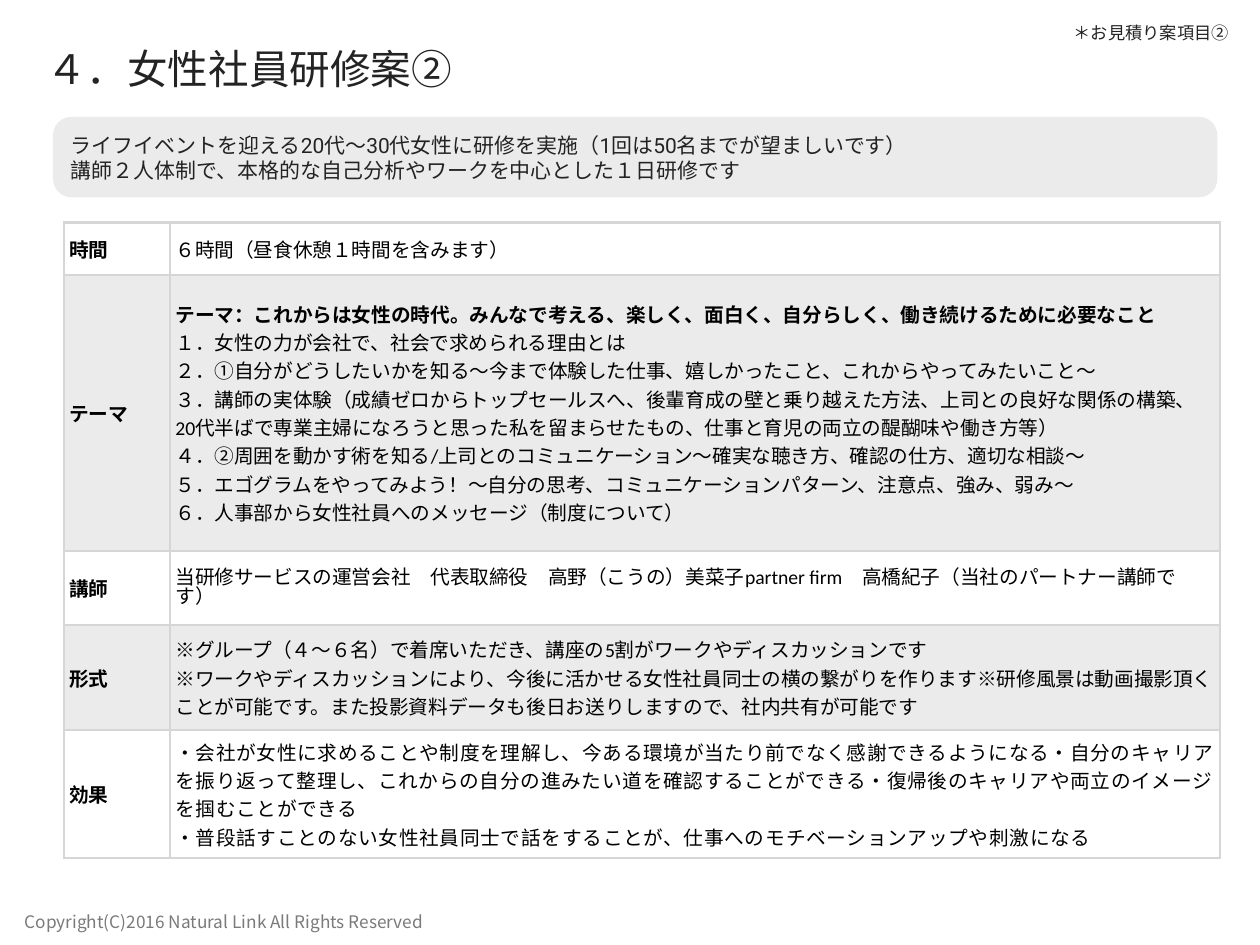
from lxml import etree
from pptx import Presentation
from pptx.dml.color import RGBColor
from pptx.enum.shapes import MSO_SHAPE as SHAPE
from pptx.enum.text import MSO_ANCHOR as ANCHOR
from pptx.oxml.ns import qn
from pptx.util import Cm, Pt

# Content
TITLE = "４．女性社員研修案②"
TAG = "＊お見積り案項目②"
COPYRIGHT = "Copyright(C)2016 Natural Link All Rights Reserved"
SUMMARY = [
    "ライフイベントを迎える20代〜30代女性に研修を実施（1回は50名までが望ましいです）",
    "講師２人体制で、本格的な自己分析やワークを中心とした１日研修です",
]
THEME = "テーマ：これからは女性の時代。みんなで考える、楽しく、面白く、自分らしく、働き続けるために必要なこと"
# Label, row height in cm, lines, format
ROWS = [
    ("時間", 1.5, ["６時間（昼食休憩１時間を含みます）"], {}),
    ("テーマ", 7.92, [
        THEME,
        "１．女性の力が会社で、社会で求められる理由とは",
        "２．①自分がどうしたいかを知る〜今まで体験した仕事、嬉しかったこと、これからやってみたいこと〜",
        "３．講師の実体験（成績ゼロからトップセールスへ、後輩育成の壁と乗り越えた方法、上司との良好な関係の構築、",
        "20代半ばで専業主婦になろうと思った私を留まらせたもの、仕事と育児の両立の醍醐味や働き方等）",
        "４．②周囲を動かす術を知る/上司とのコミュニケーション〜確実な聴き方、確認の仕方、適切な相談〜",
        "５．エゴグラムをやってみよう！〜自分の思考、コミュニケーションパターン、注意点、強み、弱み〜",
        "６．人事部から女性社員へのメッセージ（制度について）",
    ], {}),
    ("講師", 2.13, [
        "当研修サービスの運営会社　代表取締役　高野（こうの）美菜子partner firm　高橋紀子（当社のパートナー講師です）",
    ], {"spacing": 0.7}),
    ("形式", 3.0, [
        "※グループ（４〜６名）で着席いただき、講座の5割がワークやディスカッションです",
        "※ワークやディスカッションにより、今後に活かせる女性社員同士の横の繋がりを作ります"
        "※研修風景は動画撮影頂くことが可能です。また投影資料データも後日お送りしますので、社内共有が可能です",
    ], {}),
    ("効果", 3.68, [
        "・会社が女性に求めることや制度を理解し、今ある環境が当たり前でなく感謝できるようになる"
        "・自分のキャリアを振り返って整理し、これからの自分の進みたい道を確認することができる"
        "・復帰後のキャリアや両立のイメージを掴むことができる",
        "・普段話すことのない女性社員同士で話をすることが、仕事へのモチベーションアップや刺激になる",
    ], {"font": "Noto Sans CJK JP", "tracking": 0.6}),
]
COL_WIDTHS = [3.05, 30.1]
INK, GREY, PANEL, BORDER = "232323", "7A7A7A", "EBEBEB", "D6D6D6"
INSET = Cm(0.15)


def color(hex_code):
    return RGBColor.from_string(hex_code)


def write(tf, lines, size=16, font="Calibri", east="Noto Sans CJK JP", ink="000000",
          bold_lines=(), spacing=None, tracking=None):
    for i, line in enumerate(lines):
        p = tf.paragraphs[0] if i == 0 else tf.add_paragraph()
        if spacing:
            p.line_spacing = spacing
        r = p.add_run()
        r.text = line
        r.font.size, r.font.name, r.font.bold = Pt(size), font, line in bold_lines
        r.font.color.rgb = color(ink)
        rPr = r.font._element
        etree.SubElement(rPr, qn("a:ea")).set("typeface", east)
        if tracking:
            rPr.set("spc", str(round(tracking * 100)))


def text_box(s, box, lines, wrap=True, **fmt):
    tf = s.shapes.add_textbox(*map(Cm, box)).text_frame
    tf.word_wrap, tf.vertical_anchor = wrap, ANCHOR.MIDDLE
    tf.margin_left = tf.margin_right = tf.margin_top = tf.margin_bottom = INSET
    write(tf, lines, **fmt)


def style_cell(cell, fill):
    cell.vertical_anchor = ANCHOR.MIDDLE
    cell.margin_left = cell.margin_right = cell.margin_top = cell.margin_bottom = INSET
    tcPr = cell._tc.get_or_add_tcPr()
    for side in ("lnL", "lnR", "lnT", "lnB"):
        ln = etree.SubElement(tcPr, qn("a:" + side), w=str(Pt(2)))
        line_fill = etree.SubElement(ln, qn("a:solidFill"))
        etree.SubElement(line_fill, qn("a:srgbClr"), val=BORDER)
    cell.fill.solid()
    cell.fill.fore_color.rgb = color(fill)


prs = Presentation()
prs.slide_width, prs.slide_height = Cm(36.12), Cm(27.1)
s = prs.slides.add_slide(prs.slide_layouts[6])

# Title and footer
roboto = {"font": "Roboto", "east": "Roboto", "ink": INK}
text_box(s, (1.17, 1.22, 33.81, 1.47), [TITLE], size=33, **roboto)
text_box(s, (0.56, 26.04, 19.23, 0.79), [COPYRIGHT], size=14,
         font="Noto Sans CJK JP", ink=GREY)

# Summary panel
panel = s.shapes.add_shape(SHAPE.ROUNDED_RECTANGLE, Cm(1.52), Cm(3.35), Cm(33.38), Cm(2.31))
panel.adjustments[0] = 0.23
panel.shadow.inherit = False
panel.fill.solid()
panel.fill.fore_color.rgb = color(PANEL)
panel.line.fill.background()

# Programme table
heights = [row[1] for row in ROWS]
table = s.shapes.add_table(len(ROWS), 2, Cm(1.83), Cm(6.38),
                           Cm(sum(COL_WIDTHS)), Cm(sum(heights))).table
table.first_row = table.horz_banding = False
for col, width in zip(table.columns, COL_WIDTHS):
    col.width = Cm(width)
for i, (label, height, lines, fmt) in enumerate(ROWS):
    table.rows[i].height = Cm(height)
    head, body = table.cell(i, 0), table.cell(i, 1)
    for cell in (head, body):
        style_cell(cell, PANEL if i % 2 else "FFFFFF")
    write(head.text_frame, [label], bold_lines=[label])
    write(body.text_frame, lines, bold_lines=[THEME], **fmt)

# Tag and summary text
text_box(s, (30.63, 0.61, 4.78, 0.79), [TAG], wrap=False, size=14, spacing=0.7, **roboto)
text_box(s, (1.88, 3.56, 32.36, 1.9), SUMMARY, size=17, **roboto)

prs.save("out.pptx")
